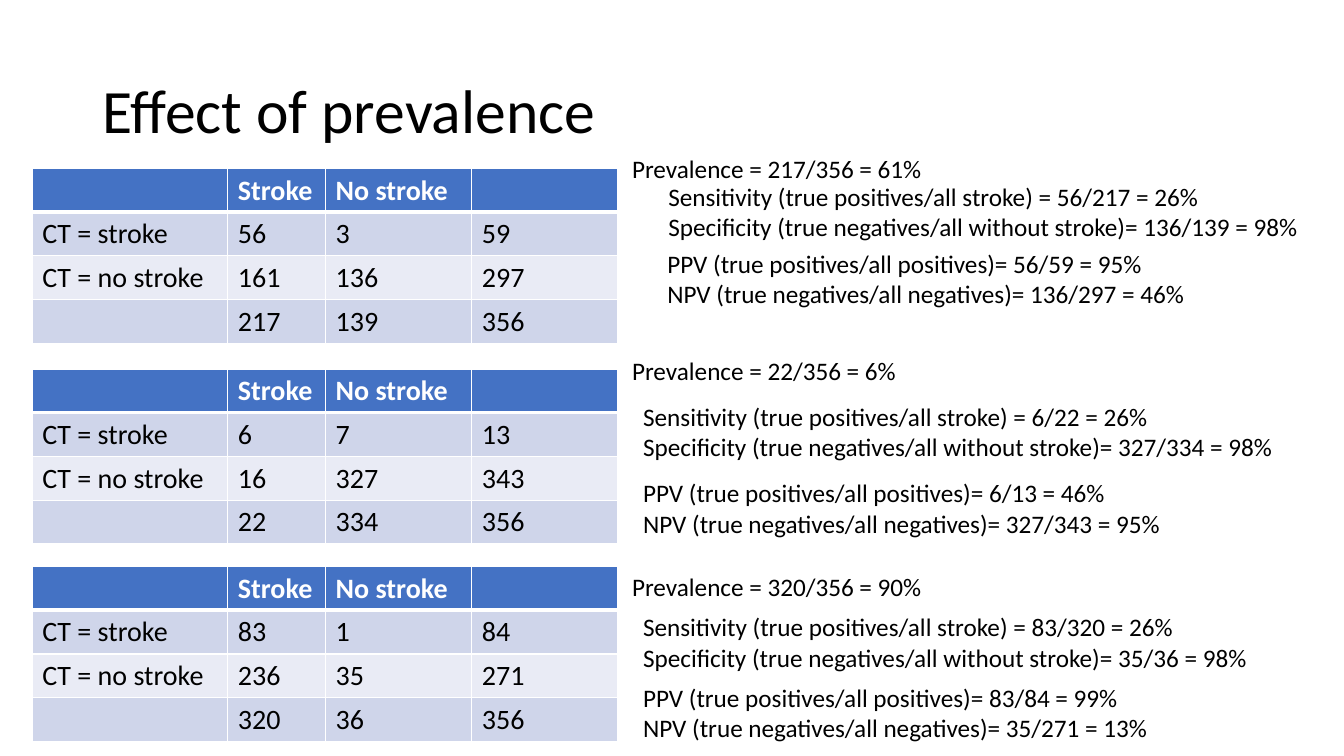
from lxml import etree
from pptx import Presentation
from pptx.dml.color import RGBColor
from pptx.enum.text import MSO_ANCHOR, MSO_AUTO_SIZE
from pptx.oxml.ns import qn
from pptx.util import Inches, Pt

MIDDLE = MSO_ANCHOR.MIDDLE
GROW = MSO_AUTO_SIZE.SHAPE_TO_FIT_TEXT

FONT = "Calibri"
BLACK, WHITE, HEADER_FILL = "000000", "FFFFFF", "4472C4"
BAND_FILLS = ("CFD5EA", "E9EBF5")

TITLE = "Effect of prevalence"
HEADERS = ("", "Stroke", "No stroke", "")
ROW_LABELS = ("CT = stroke", "CT = no stroke", "")

SCENARIOS = [
    {
        "counts": ((56, 3, 59), (161, 136, 297), (217, 139, 356)),
        "percents": {"prevalence": 61, "sensitivity": 26, "specificity": 98, "ppv": 95, "npv": 46},
        "table_top": 1.67,
        "prevalence_box": (6.17, 1.47, 3.11),
        "accuracy_box": (6.53, 1.75, 6.52),
        "predictive_box": (6.52, 2.41, 5.4),
    },
    {
        "counts": ((6, 7, 13), (16, 327, 343), (22, 334, 356)),
        "percents": {"prevalence": 6, "sensitivity": 26, "specificity": 98, "ppv": 46, "npv": 95},
        "table_top": 3.66,
        "prevalence_box": (6.17, 3.48, 2.85),
        "accuracy_box": (6.28, 3.93, 6.52),
        "predictive_box": (6.28, 4.69, 5.4),
    },
    {
        "counts": ((83, 1, 84), (236, 35, 271), (320, 36, 356)),
        "percents": {"prevalence": 90, "sensitivity": 26, "specificity": 98, "ppv": 99, "npv": 13},
        "table_top": 5.62,
        "prevalence_box": (6.17, 5.62, 3.11),
        "accuracy_box": (6.28, 6.02, 6.26),
        "predictive_box": (6.28, 6.72, 5.27),
    },
]

TABLE_LEFT = 0.32
COLUMN_WIDTHS = (1.94, 0.97, 1.45, 1.45)
ROW_HEIGHT = 0.43
LINE_HEIGHT, BOX_PADDING = 0.3, 0.1


def color(hex_value):
    return RGBColor.from_string(hex_value)


def style(paragraph, size, hex_value, bold=False):
    font = paragraph.font
    font.name, font.size, font.bold = FONT, Pt(size), bold
    font.color.rgb = color(hex_value)


def add_text(slide, box, lines, size=18):
    left, top, width = box
    height = LINE_HEIGHT * len(lines) + BOX_PADDING
    shape = slide.shapes.add_textbox(Inches(left), Inches(top), Inches(width), Inches(height))
    frame = shape.text_frame
    frame.word_wrap = False
    frame.auto_size = GROW
    frame.text = "\n".join(lines)
    for paragraph in frame.paragraphs:
        style(paragraph, size, BLACK)


def add_title(slide):
    shape = slide.shapes.add_textbox(Inches(0.92), Inches(0.4), Inches(11.5), Inches(1.45))
    frame = shape.text_frame
    frame.word_wrap = True
    frame.vertical_anchor = MIDDLE
    frame.text = TITLE
    paragraph = frame.paragraphs[0]
    paragraph.line_spacing = 0.9
    style(paragraph, 44, BLACK)


def add_borders(cell, top, bottom):
    properties = cell._tc.get_or_add_tcPr()
    for tag, points in (("a:lnL", 1), ("a:lnR", 1), ("a:lnT", top), ("a:lnB", bottom)):
        line = etree.SubElement(properties, qn(tag), w=str(Pt(points)))
        fill = etree.SubElement(line, qn("a:solidFill"))
        etree.SubElement(fill, qn("a:srgbClr"), val=WHITE)


def add_counts_table(slide, top, counts):
    rows = [HEADERS] + [(label, *values) for label, values in zip(ROW_LABELS, counts)]
    frame = slide.shapes.add_table(
        len(rows), len(HEADERS), Inches(TABLE_LEFT), Inches(top),
        Inches(sum(COLUMN_WIDTHS)), Inches(ROW_HEIGHT * len(rows)))
    table = frame.table
    for column, width in zip(table.columns, COLUMN_WIDTHS):
        column.width = Inches(width)
    for row_index, values in enumerate(rows):
        is_header = row_index == 0
        table.rows[row_index].height = Inches(ROW_HEIGHT)
        for column_index, value in enumerate(values):
            cell = table.cell(row_index, column_index)
            cell.text = str(value)
            style(cell.text_frame.paragraphs[0], 20, WHITE if is_header else BLACK, is_header)
            add_borders(cell, 3 if row_index == 1 else 1, 3 if is_header else 1)
            cell.fill.solid()
            cell.fill.fore_color.rgb = color(
                HEADER_FILL if is_header else BAND_FILLS[(row_index - 1) % 2])


def add_scenario(slide, scenario):
    counts, percents = scenario["counts"], scenario["percents"]
    (true_pos, _, all_pos), (_, true_neg, all_neg), (stroke, no_stroke, total) = counts
    add_counts_table(slide, scenario["table_top"], counts)
    add_text(slide, scenario["prevalence_box"], [
        f"Prevalence = {stroke}/{total} = {percents['prevalence']}%"])
    add_text(slide, scenario["accuracy_box"], [
        f"Sensitivity (true positives/all stroke) = {true_pos}/{stroke} = {percents['sensitivity']}%",
        f"Specificity (true negatives/all without stroke)= {true_neg}/{no_stroke} = {percents['specificity']}%"])
    add_text(slide, scenario["predictive_box"], [
        f"PPV (true positives/all positives)= {true_pos}/{all_pos} = {percents['ppv']}%",
        f"NPV (true negatives/all negatives)= {true_neg}/{all_neg} = {percents['npv']}%"])


def main():
    """Build the slide comparing test accuracy at three prevalences."""
    presentation = Presentation()
    presentation.slide_width, presentation.slide_height = Inches(13.33), Inches(7.5)
    slide = presentation.slides.add_slide(presentation.slide_layouts[6])
    add_title(slide)
    for scenario in SCENARIOS:
        add_scenario(slide, scenario)
    presentation.save("out.pptx")


if __name__ == "__main__":
    main()
